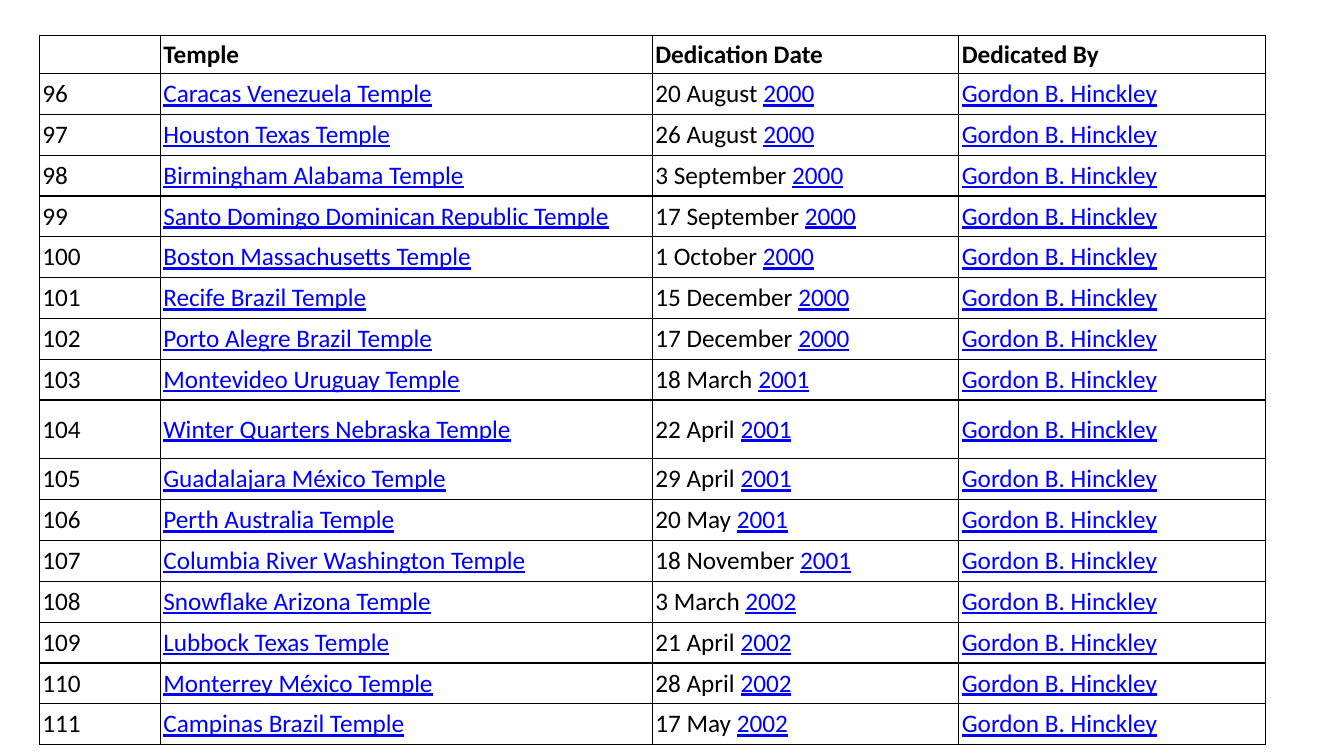
from lxml.etree import SubElement
from pptx import Presentation
from pptx.dml.color import RGBColor
from pptx.enum.text import MSO_ANCHOR
from pptx.oxml.ns import qn
from pptx.util import Inches, Pt

BLACK = RGBColor(0x00, 0x00, 0x00)
LINK_BLUE = RGBColor(0x00, 0x00, 0xFF)
FONT = "Calibri"
NBSP = " "

HEADERS = ["", "Temple", "Dedication Date", "Dedicated By"]
DEDICATED_BY = "Gordon B. Hinckley"
FIRST_NUMBER = 96
TEMPLES = [
    ("Caracas Venezuela Temple", "20 August", "2000"),
    ("Houston Texas Temple", "26 August", "2000"),
    ("Birmingham Alabama Temple", "3 September", "2000"),
    ("Santo Domingo Dominican Republic Temple", "17 September", "2000"),
    ("Boston Massachusetts Temple", "1 October", "2000"),
    ("Recife Brazil Temple", "15 December", "2000"),
    ("Porto Alegre Brazil Temple", "17 December", "2000"),
    ("Montevideo Uruguay Temple", "18 March", "2001"),
    ("Winter Quarters Nebraska Temple", "22 April", "2001"),
    ("Guadalajara México Temple", "29 April", "2001"),
    ("Perth Australia Temple", "20 May", "2001"),
    ("Columbia River Washington Temple", "18 November", "2001"),
    ("Snowflake Arizona Temple", "3 March", "2002"),
    ("Lubbock Texas Temple", "21 April", "2002"),
    ("Monterrey México Temple", "28 April", "2002"),
    ("Campinas Brazil Temple", "17 May", "2002"),
]
UPPER_COUNT = 8

LEFT = 0.39
COLUMN_WIDTHS = [1.2, 4.88, 3.04, 3.04]
UPPER_TOP, UPPER_HEIGHT, HEADER_HEIGHT = 0.35, 3.62, 0.38
LOWER_HEIGHT, TALL_ROW_HEIGHT = 3.42, 0.58


def temple_row(number, temple, day, year):
    return [
        [(str(number), "plain")],
        [(temple, "link")],
        [(day + NBSP, "plain"), (year, "link")],
        [(DEDICATED_BY, "link")],
    ]


def add_borders(cell):
    properties = cell._tc.get_or_add_tcPr()
    for side in ("a:lnL", "a:lnR", "a:lnT", "a:lnB"):
        line = SubElement(properties, qn(side), w=str(Pt(1)))
        fill = SubElement(line, qn("a:solidFill"))
        SubElement(fill, qn("a:srgbClr"), val=str(BLACK))


def fill_cell(cell, pieces):
    cell.margin_left = cell.margin_right = Inches(0.03)
    cell.margin_top = cell.margin_bottom = Inches(0.03)
    cell.vertical_anchor = MSO_ANCHOR.MIDDLE
    add_borders(cell)
    cell.fill.background()
    paragraph = cell.text_frame.paragraphs[0]
    paragraph.font.size = Pt(18)
    for text, style in pieces:
        run = paragraph.add_run()
        run.text = text
        run.font.name = FONT
        run.font.size = Pt(18)
        run.font.bold = style == "header"
        run.font.underline = style == "link"
        run.font.color.rgb = LINK_BLUE if style == "link" else BLACK


def add_temple_table(slide, rows, top, height, first_height):
    frame = slide.shapes.add_table(
        len(rows), len(COLUMN_WIDTHS), Inches(LEFT), Inches(top),
        Inches(sum(COLUMN_WIDTHS)), Inches(height))
    table = frame.table
    table.first_row = table.horz_banding = False
    for column, width in zip(table.columns, COLUMN_WIDTHS):
        column.width = Inches(width)
    row_height = (height - first_height) / (len(rows) - 1)
    for index, (row, contents) in enumerate(zip(table.rows, rows)):
        row.height = Inches(row_height if index else first_height)
        for cell, pieces in zip(row.cells, contents):
            fill_cell(cell, pieces)


def main():
    presentation = Presentation()
    presentation.slide_width = Inches(13.33)
    presentation.slide_height = Inches(7.5)
    slide = presentation.slides.add_slide(presentation.slide_layouts[6])

    header_row = [[(text, "header")] if text else [] for text in HEADERS]
    temple_rows = [temple_row(number, *temple)
                   for number, temple in enumerate(TEMPLES, FIRST_NUMBER)]
    add_temple_table(slide, temple_rows[UPPER_COUNT:],
                     UPPER_TOP + UPPER_HEIGHT, LOWER_HEIGHT, TALL_ROW_HEIGHT)
    add_temple_table(slide, [header_row] + temple_rows[:UPPER_COUNT],
                     UPPER_TOP, UPPER_HEIGHT, HEADER_HEIGHT)
    presentation.save("out.pptx")


if __name__ == "__main__":
    main()
